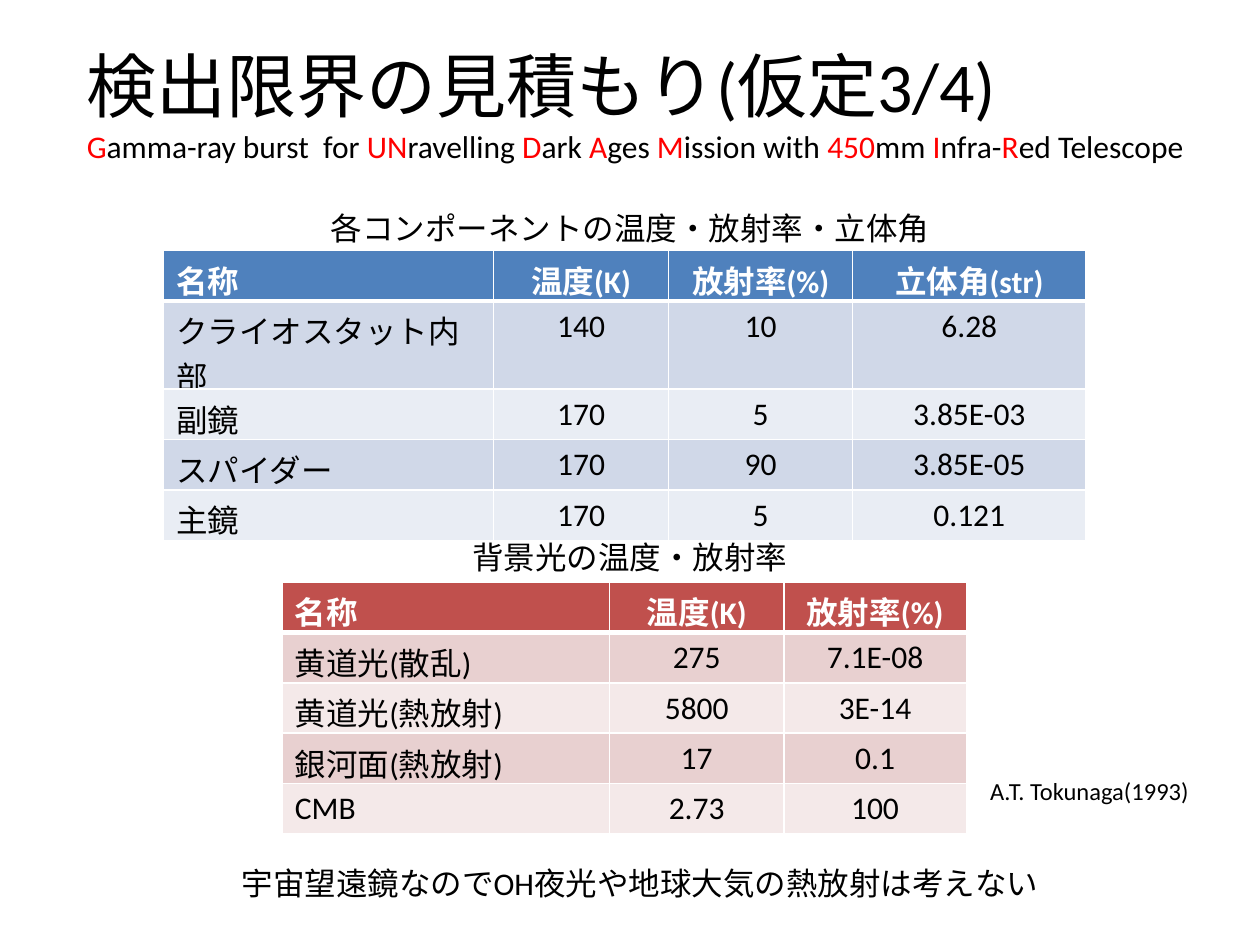
from lxml.etree import SubElement
from pptx import Presentation
from pptx.dml.color import RGBColor
from pptx.enum.text import PP_ALIGN
from pptx.oxml.ns import qn
from pptx.util import Cm, Pt

LEFT, MID = PP_ALIGN.LEFT, PP_ALIGN.CENTER
BLACK, WHITE, RED = "000000", "FFFFFF", "FF0000"
PARTS = [
    ["名称", "温度(K)", "放射率(%)", "立体角(str)"],
    ["クライオスタット内部", "140", "10", "6.28"],
    ["副鏡", "170", "5", "3.85E-03"],
    ["スパイダー", "170", "90", "3.85E-05"],
    ["主鏡", "170", "5", "0.121"],
]
SKY = [
    ["名称", "温度(K)", "放射率(%)"],
    ["黄道光(散乱)", "275", "7.1E-08"],
    ["黄道光(熱放射)", "5800", "3E-14"],
    ["銀河面(熱放射)", "17", "0.1"],
    ["CMB", "2.73", "100"],
]
MISSION = ("|G|amma-ray burst  for |UN|ravelling |D|ark |A|ges |M|ission with "
           "|450|mm |I|nfra-|R|ed Telescope")


def color(code):
    """Turn a hex string into a colour."""
    return RGBColor.from_string(code)


def write(para, text, size=18, tint=BLACK, bold=False, align=LEFT):
    """Write text in a paragraph, with the parts between bars in red."""
    para.alignment = align
    for i, part in enumerate(text.split("|")):
        if part:
            run = para.add_run()
            run.text = part
            font = run.font
            font.name, font.size, font.bold = "Calibri", Pt(size), bold
            font.color.rgb = color(RED if i % 2 else tint)


def label(slide, text, left, top, width, height, wrap=True, **style):
    """Add a text box and return its frame."""
    box = slide.shapes.add_textbox(Cm(left), Cm(top), Cm(width), Cm(height))
    frame = box.text_frame
    frame.word_wrap = wrap
    write(frame.paragraphs[0], text, **style)
    return frame


def edge(cell, side, width):
    """Draw a white border on one side of a cell."""
    line = SubElement(cell._tc.get_or_add_tcPr(), qn(f"a:ln{side}"), w=str(Pt(width)))
    fill = SubElement(line, qn("a:solidFill"))
    SubElement(fill, qn("a:srgbClr"), val=WHITE)


def grid(slide, rows, left, top, widths, height, fills):
    """Add a banded table whose fills are for head, odd and even rows."""
    head, odd, even = fills
    frame = slide.shapes.add_table(len(rows), len(widths), Cm(left), Cm(top),
                                   Cm(sum(widths)), Cm(5.08))
    table = frame.table
    for col, width in zip(table.columns, widths):
        col.width = Cm(width)
    for r, row in enumerate(rows):
        table.rows[r].height = Cm(height)
        for c, text in enumerate(row):
            cell = table.cell(r, c)
            for side in "LRTB":
                thick = (r, side) in ((0, "B"), (1, "T"))
                edge(cell, side, 3 if thick else 1)
            cell.fill.solid()
            cell.fill.fore_color.rgb = color(head if r == 0 else odd if r % 2 else even)
            write(cell.text_frame.paragraphs[0], text, bold=r == 0,
                  tint=BLACK if r else WHITE, align=MID if c else LEFT)
    frame.height = Cm(5.08)


def main():
    """Build the slide and save it."""
    deck = Presentation()
    deck.slide_width, deck.slide_height = Cm(25.4), Cm(19.05)
    slide = deck.slides.add_slide(deck.slide_layouts[6])
    label(slide, "各コンポーネントの温度・放射率・立体角", 0, 4.09, 25.4, 1.02, align=MID)
    grid(slide, PARTS, 3.3, 5.05, [6.65, 3.53, 3.71, 4.7], 0.99,
         ("4F81BD", "D0D8E8", "E9EDF4"))
    label(slide, "背景光の温度・放射率", 0, 10.72, 25.4, 1.02, align=MID)
    grid(slide, SKY, 5.69, 11.73, [6.6, 3.51, 3.68], 0.89,
         ("C0504D", "E8D0D0", "F4E9E9"))
    label(slide, "A.T. Tokunaga(1993)", 19.71, 15.52, 4.55, 0.86, wrap=False, size=14)
    label(slide, "宇宙望遠鏡なのでOH夜光や地球大気の熱放射は考えない",
          4.62, 17.3, 16.87, 1.02, wrap=False)
    title = label(slide, "検出限界の見積もり(仮定3/4)", 1.5, 0.74, 23.9, 2.74, size=40)
    write(title.add_paragraph(), MISSION)
    deck.save("out.pptx")


if __name__ == "__main__":
    main()
